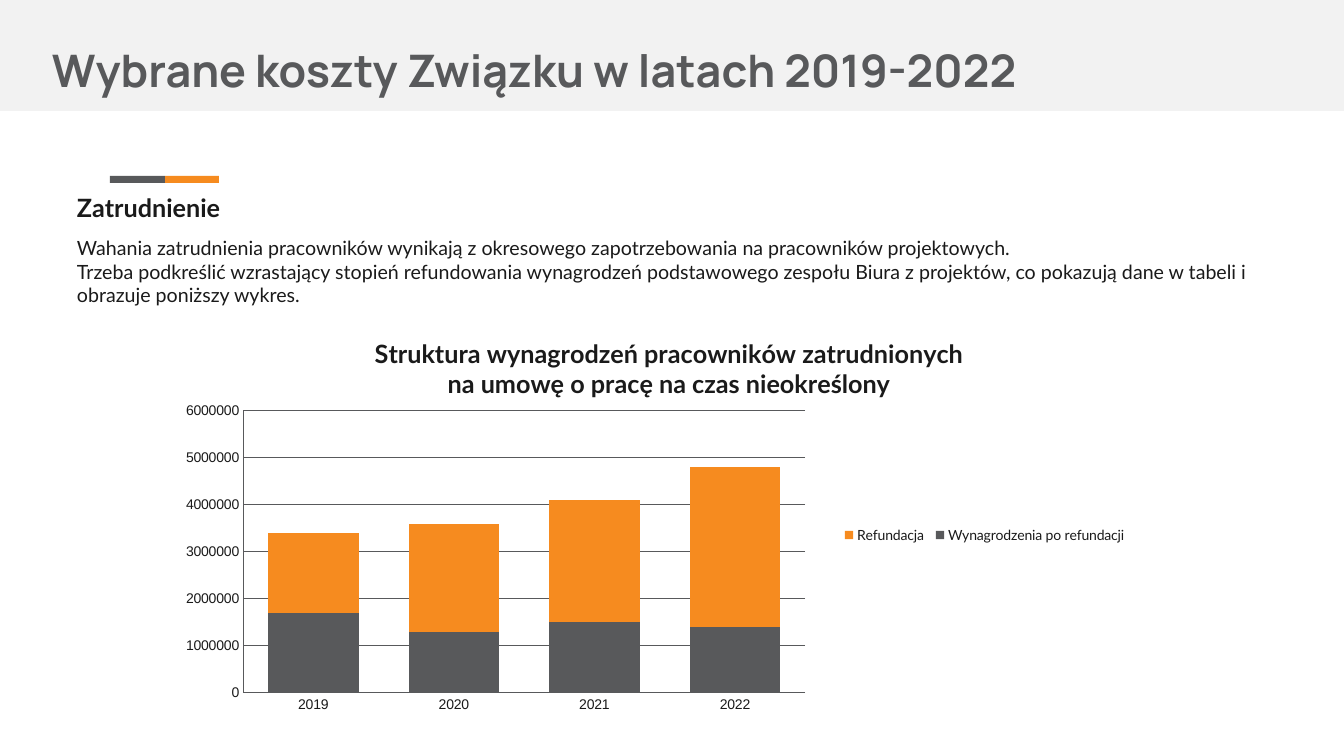
from dataclasses import dataclass

from lxml import etree
from pptx import Presentation
from pptx.chart.axis import _BaseAxis
from pptx.chart.chart import Chart
from pptx.chart.data import CategoryChartData
from pptx.dml.color import RGBColor
from pptx.enum.chart import XL_CHART_TYPE, XL_LEGEND_POSITION, XL_TICK_MARK
from pptx.enum.shapes import MSO_SHAPE
from pptx.enum.text import MSO_ANCHOR
from pptx.oxml.ns import qn
from pptx.slide import Slide
from pptx.text.text import Font
from pptx.util import Emu, Pt

STACKED = XL_CHART_TYPE.COLUMN_STACKED
LEGEND_RIGHT = XL_LEGEND_POSITION.RIGHT
NO_TICK = XL_TICK_MARK.NONE
RECTANGLE = MSO_SHAPE.RECTANGLE
MIDDLE = MSO_ANCHOR.MIDDLE
TOP = MSO_ANCHOR.TOP

EMU_PER_PX = 914400 / 100.8
GRAY, ORANGE, INK, BAND = "58595B", "F68B1F", "1A1A1A", "F2F2F2"


@dataclass(frozen=True)
class Area:
    left: int
    top: int
    width: int
    height: int


@dataclass(frozen=True)
class Bar:
    area: Area
    fill: str


@dataclass(frozen=True)
class TextBlock:
    area: Area
    lines: tuple[str, ...]
    face: str
    size: int
    color: str
    bold: bool = False
    inset: int = 5
    spacing: float = 1.0
    anchor: MSO_ANCHOR = TOP


@dataclass(frozen=True)
class CostSeries:
    name: str
    values: tuple[int, ...]
    fill: str


SLIDE_AREA = Area(0, 0, 1344, 756)
CHART_AREA = Area(159, 325, 1013, 404)
YEARS = ("2019", "2020", "2021", "2022")
CHART_TITLE = (
    "Struktura wynagrodzeń pracowników zatrudnionych",
    "na umowę o pracę na czas nieokreślony",
)
BARS = (
    Bar(Area(0, 0, 1344, 111), BAND),
    Bar(Area(165, 176, 54, 7), ORANGE),
    Bar(Area(110, 176, 55, 7), GRAY),
)
TEXTS = (
    TextBlock(Area(42, 0, 1130, 112), ("Wybrane koszty Związku w latach 2019-2022",),
              "Manrope", 32, GRAY, True, 10, 1.5, MIDDLE),
    TextBlock(Area(67, 187, 1013, 40), ("Zatrudnienie",), "Lato", 18, INK, True),
    TextBlock(Area(67, 231, 1193, 82), (
        "Wahania zatrudnienia pracowników wynikają z okresowego zapotrzebowania "
        "na pracowników projektowych.",
        "Trzeba podkreślić wzrastający stopień refundowania wynagrodzeń podstawowego "
        "zespołu Biura z projektów, co pokazują dane w tabeli i obrazuje poniższy wykres.",
    ), "Lato", 14, INK),
)
SERIES = (
    CostSeries("Wynagrodzenia po refundacji", (1700000, 1300000, 1500000, 1400000), GRAY),
    CostSeries("Refundacja", (1700000, 2300000, 2600000, 3400000), ORANGE),
)


def px(length: int) -> Emu:
    return Emu(round(length * EMU_PER_PX))


def place(area: Area) -> tuple[Emu, Emu, Emu, Emu]:
    return px(area.left), px(area.top), px(area.width), px(area.height)


def rgb(color: str) -> RGBColor:
    return RGBColor.from_string(color)


def style_font(font: Font, face: str, size: int, color: str, bold: bool = False) -> None:
    font.name = face
    font.size = Pt(size)
    font.bold = bold
    font.color.rgb = rgb(color)


def add_bar(slide: Slide, bar: Bar) -> None:
    shape = slide.shapes.add_shape(RECTANGLE, *place(bar.area))
    shape.shadow.inherit = False
    shape.fill.solid()
    shape.fill.fore_color.rgb = rgb(bar.fill)
    shape.line.fill.background()


def add_text(slide: Slide, block: TextBlock) -> None:
    frame = slide.shapes.add_textbox(*place(block.area)).text_frame
    frame.word_wrap = True
    frame.vertical_anchor = block.anchor
    frame.margin_left = frame.margin_right = px(10)
    frame.margin_top = frame.margin_bottom = px(block.inset)
    frame.text = "\n".join(block.lines)
    for para in frame.paragraphs:
        para.line_spacing = block.spacing
        for span in para.runs:
            style_font(span.font, block.face, block.size, block.color, block.bold)


def set_layout(parent: etree._Element, before: tuple[str, ...], **parts: str | float) -> None:
    for old in parent.findall(qn("c:layout")):
        parent.remove(old)
    layout = etree.Element(qn("c:layout"))
    manual = etree.SubElement(layout, qn("c:manualLayout"))
    for tag, value in parts.items():
        etree.SubElement(manual, qn(f"c:{tag}")).set("val", str(value))
    following = next(child for child in parent if child.tag in [qn(tag) for tag in before])
    following.addprevious(layout)


def style_axis(axis: _BaseAxis) -> None:
    axis.major_tick_mark = axis.minor_tick_mark = NO_TICK
    axis.format.line.color.rgb = rgb(GRAY)
    axis.format.line.width = Pt(0.75)
    style_font(axis.tick_labels.font, "Arial", 10, INK)


def style_title(chart: Chart) -> None:
    chart.has_title = True
    frame = chart.chart_title.text_frame
    frame.text = "\n".join(CHART_TITLE)
    for para in frame.paragraphs:
        for span in para.runs:
            style_font(span.font, "Lato", 18, INK, True)
    chart.chart_title.include_in_layout = False
    set_layout(chart.chart_title._element, ("c:overlay",),
               xMode="edge", yMode="edge", x=0.21, y=0.02)


def add_cost_chart(slide: Slide) -> None:
    costs = CategoryChartData(number_format="0")
    costs.categories = YEARS
    for series in SERIES:
        costs.add_series(series.name, series.values)
    chart = slide.shapes.add_chart(STACKED, *place(CHART_AREA), costs).chart
    style_font(chart.font, "Arial", 10, INK)
    style_title(chart)

    plot = chart.plots[0]
    plot.gap_width = 55
    plot.overlap = 100
    plot.vary_by_categories = False
    for drawn, series in zip(plot.series, SERIES):
        drawn.format.fill.solid()
        drawn.format.fill.fore_color.rgb = rgb(series.fill)

    style_axis(chart.category_axis)
    values = chart.value_axis
    style_axis(values)
    values.minimum_scale, values.maximum_scale, values.major_unit = 0, 6000000, 1000000
    values.tick_labels.number_format = "0"
    values.tick_labels.number_format_is_linked = False
    values.major_gridlines.format.line.color.rgb = rgb(GRAY)
    values.major_gridlines.format.line.width = Pt(0.75)

    chart.has_legend = True
    chart.legend.position = LEGEND_RIGHT
    chart.legend.include_in_layout = False
    style_font(chart.legend.font, "Lato", 10, INK)
    set_layout(chart.legend._element, ("c:overlay",),
               xMode="edge", yMode="edge", x=0.67, y=0.49, w=0.29, h=0.06)
    plot_area = chart._chartSpace.chart.plotArea
    set_layout(plot_area, ("c:barChart",), layoutTarget="inner",
               xMode="edge", yMode="edge", x=0.083, y=0.212, w=0.555, h=0.699)


def main() -> None:
    deck = Presentation()
    deck.slide_width, deck.slide_height = px(SLIDE_AREA.width), px(SLIDE_AREA.height)
    page = deck.slides.add_slide(deck.slide_layouts[6])
    for bar in BARS:
        add_bar(page, bar)
    for block in TEXTS:
        add_text(page, block)
    add_cost_chart(page)
    deck.save("out.pptx")


if __name__ == "__main__":
    main()
